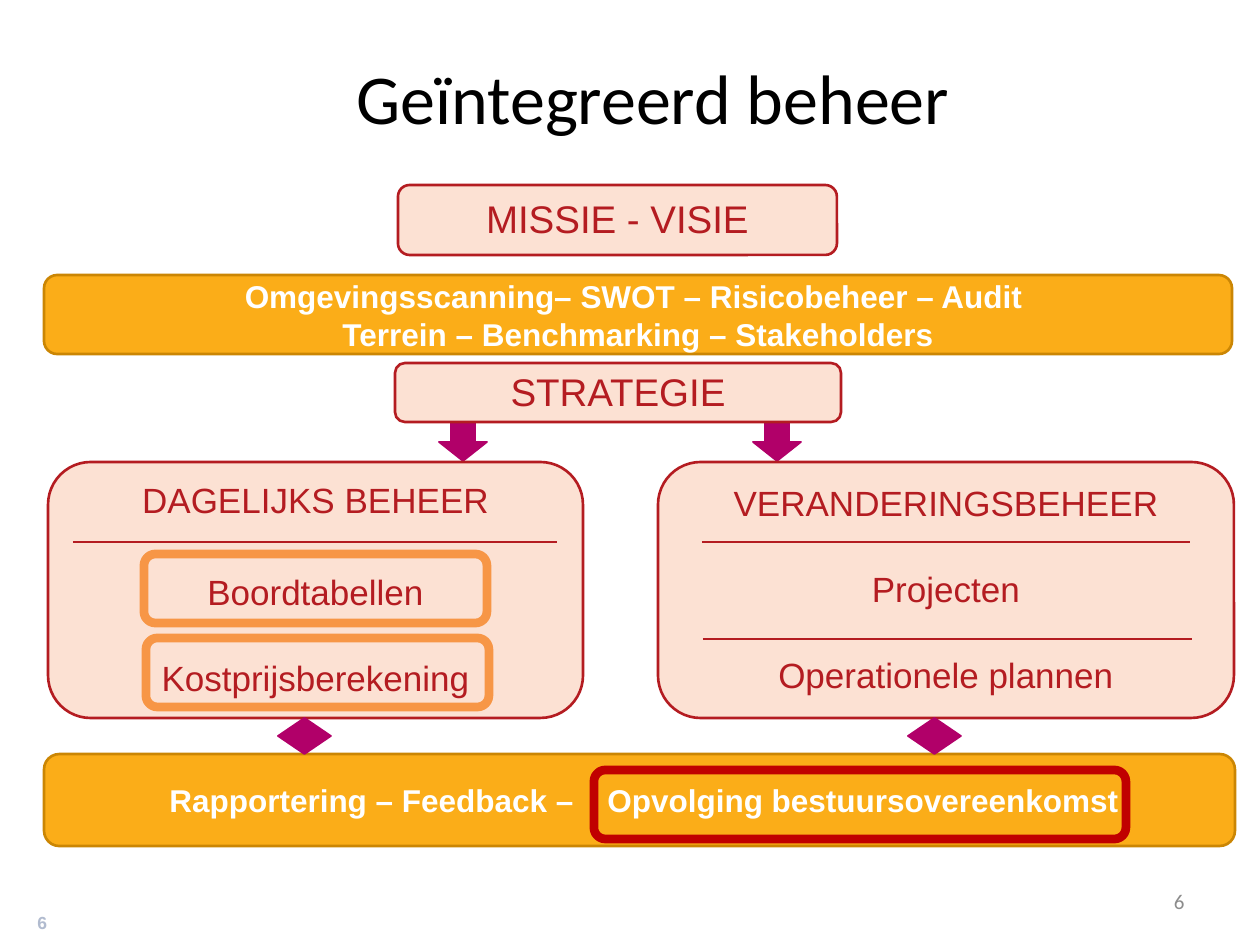
from lxml import etree
from pptx import Presentation, util as u
from pptx.dml.color import RGBColor
from pptx.enum import shapes, text
from pptx.oxml.ns import qn

EMU_PER_PX = 914400 / 126
RED = RGBColor(0xB4, 0x1C, 0x21)
PINK = RGBColor(0xFC, 0xE1, 0xD3)
AMBER = RGBColor(0xFB, 0xAD, 0x18)
BROWN = RGBColor(0xCB, 0x86, 0x04)
MAGENTA = RGBColor(0xB1, 0x00, 0x69)
ORANGE = RGBColor(0xF7, 0x96, 0x46)
DARK_RED = RGBColor(0xC0, 0x00, 0x00)
WHITE = RGBColor(0xFF, 0xFF, 0xFF)
BLACK = RGBColor(0x00, 0x00, 0x00)
GREY = RGBColor(0x8C, 0x8C, 0x8C)
BLUE_GREY = RGBColor(0xB1, 0xBB, 0xCF)
SHAPE = shapes.MSO_SHAPE
ALIGN = text.PP_ALIGN
MIDDLE = text.MSO_ANCHOR.MIDDLE


def px(n):
    return u.Emu(round(n * EMU_PER_PX))


def add_run(p, words, size, color, bold=False, font="Arial"):
    r = p.add_run()
    r.text = words
    r.font.name = font
    r.font.size = u.Pt(size)
    r.font.bold = bold
    r.font.color.rgb = color


def add_shape(s, kind, box, fill, line, width):
    sp = s.shapes.add_shape(kind, *map(px, box))
    sp.shadow.inherit = False
    if fill is None:
        sp.fill.background()
    else:
        sp.fill.solid()
        sp.fill.fore_color.rgb = fill
    sp.line.color.rgb = line
    sp.line.width = u.Pt(width)
    return sp


def add_panel(s, box, lines, size, gaps=()):
    """Pink box with centred lines; gaps are the points between lines."""
    sp = add_shape(s, SHAPE.ROUNDED_RECTANGLE, box, PINK, RED, 1.5)
    tf = sp.text_frame
    tf.word_wrap = False
    tf.vertical_anchor = MIDDLE
    tf.margin_top, tf.margin_bottom = px(3), px(6)
    for i, words in enumerate(lines):
        p = tf.add_paragraph() if i else tf.paragraphs[0]
        p.alignment = ALIGN.CENTER
        if i:
            p.space_before = u.Pt(gaps[i - 1])
        add_run(p, words, size, RED)


def add_bar(s, box, align):
    sp = add_shape(s, SHAPE.ROUNDED_RECTANGLE, box, AMBER, BROWN, 1.5)
    tf = sp.text_frame
    tf.word_wrap = True
    tf.vertical_anchor = MIDDLE
    tf.paragraphs[0].alignment = align
    return tf


def add_rule(s, x1, x2, y):
    c = s.shapes.add_connector(shapes.MSO_CONNECTOR.STRAIGHT,
                               px(x1), px(y), px(x2), px(y))
    c.line.color.rgb = RED
    c.line.width = u.Pt(1)
    etree.SubElement(c._element.spPr, qn("a:effectLst"))


def add_number(s, box, size, color, align, bold, font, anchor):
    tf = s.shapes.add_textbox(*map(px, box)).text_frame
    tf.word_wrap = True
    tf.vertical_anchor = anchor
    p = tf.paragraphs[0]
    p.alignment = align
    add_run(p, "6", size, color, bold, font)


def add_title(s, words):
    sp = s.shapes.title
    sp.left, sp.top, sp.width, sp.height = map(px, (115, 26, 1076, 141))
    tf = sp.text_frame
    tf.vertical_anchor = MIDDLE
    p = tf.paragraphs[0]
    p.alignment = ALIGN.CENTER
    add_run(p, words, 40, BLACK, font="Calibri")


def main():
    prs = Presentation()
    prs.slide_width, prs.slide_height = px(1260), px(945)
    s = prs.slides.add_slide(prs.slide_layouts[5])
    add_title(s, "Geïntegreerd beheer")

    # Arrows from strategy to the two kinds of management
    for x in (439, 753):
        add_shape(s, SHAPE.DOWN_ARROW, (x, 423, 48, 38), MAGENTA, MAGENTA, 1)

    # Mission, environment scan and strategy
    add_panel(s, (398, 185, 439, 70), ["MISSIE - VISIE"], 22)
    p = add_bar(s, (44, 275, 1188, 79), ALIGN.CENTER).paragraphs[0]
    add_run(p, "Omgevingsscanning– SWOT – Risicobeheer – Audit ", 18, WHITE, True)
    p.add_line_break()
    add_run(p, "Terrein – Benchmarking – Stakeholders", 18, WHITE, True)
    add_panel(s, (395, 363, 446, 59), ["STRATEGIE"], 22)

    # Daily management and change management
    add_panel(s, (48, 462, 535, 256),
              ["DAGELIJKS BEHEER", "Boordtabellen", "Kostprijsberekening"],
              20, (29, 25))
    add_panel(s, (658, 462, 576, 256),
              ["VERANDERINGSBEHEER", "Projecten", "Operationele plannen"],
              20, (25, 25))
    for x1, x2, y in ((73, 557, 542), (702, 1190, 542), (703, 1192, 639)):
        add_rule(s, x1, x2, y)

    # Reporting bar: the second part starts at a tab stop
    tf = add_bar(s, (44, 754, 1191, 92), ALIGN.LEFT)
    tf.margin_left = px(121)
    p = tf.paragraphs[0]
    tabs = etree.SubElement(p._p.get_or_add_pPr(), qn("a:tabLst"))
    etree.SubElement(tabs, qn("a:tab"), pos=str(px(438)), algn="l")
    add_run(p, "Rapportering – Feedback –\t", 18, WHITE, True)
    add_run(p, "Opvolging bestuursovereenkomst", 18, WHITE, True)

    for x in (278, 908):
        sp = add_shape(s, SHAPE.UP_DOWN_ARROW, (x, 718, 53, 36),
                       MAGENTA, MAGENTA, 1)
        sp.adjustments[0], sp.adjustments[1] = 0.5, 0.2

    # Highlight frames
    for x, y, w, color in ((144, 554, 343, ORANGE), (146, 638, 343, ORANGE),
                           (594, 770, 532, DARK_RED)):
        add_shape(s, SHAPE.ROUNDED_RECTANGLE, (x, y, w, 69), None, color, 5)

    # Page numbers
    add_number(s, (25, 906, 49, 30), 10, BLUE_GREY, ALIGN.LEFT, True,
               "Arial", text.MSO_ANCHOR.TOP)
    add_number(s, (903, 876, 294, 50), 12, GREY, ALIGN.RIGHT, False,
               "Calibri", MIDDLE)
    prs.save("out.pptx")


if __name__ == "__main__":
    main()
